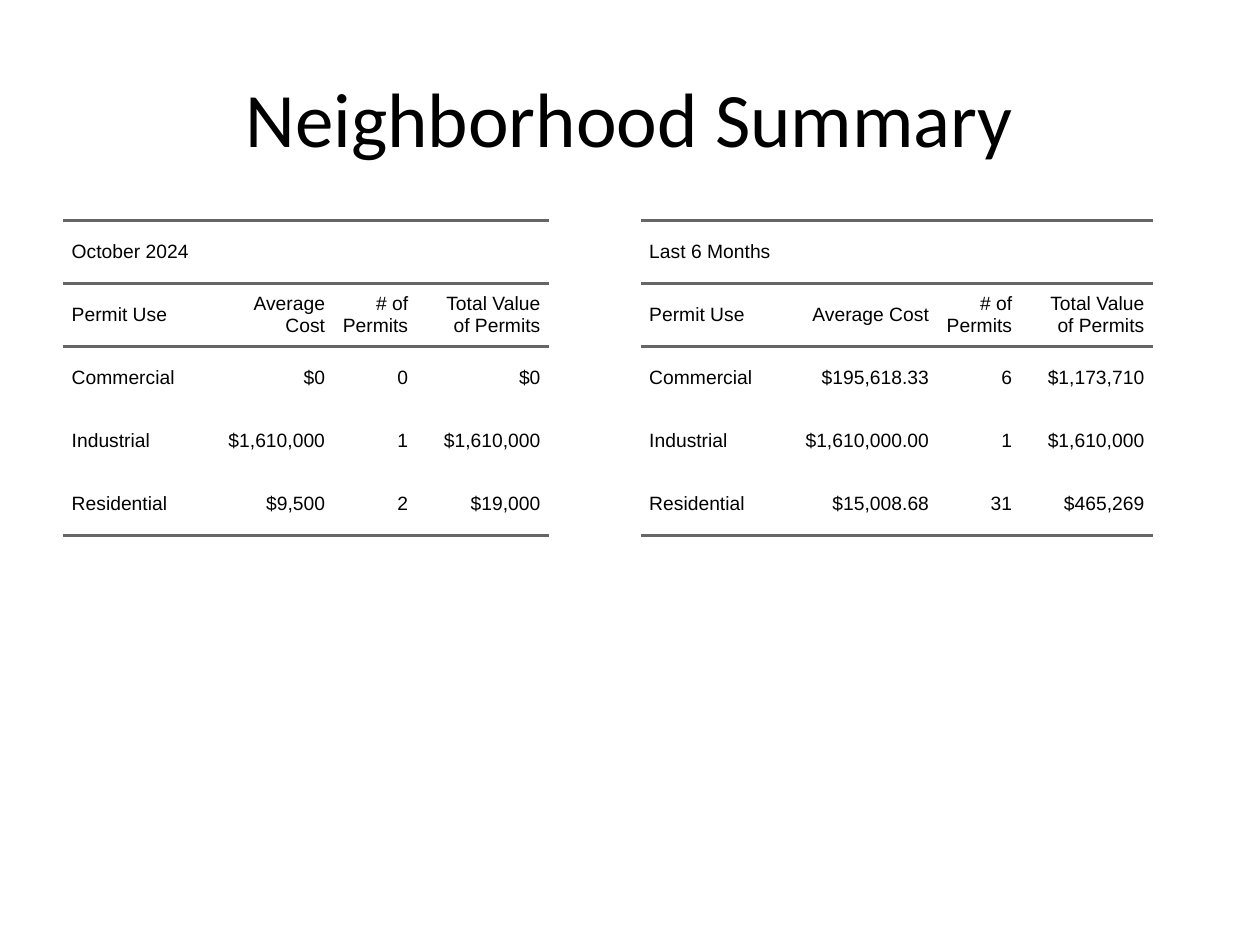
from lxml import etree
from pptx import Presentation
from pptx.dml.color import RGBColor
from pptx.enum import text as t
from pptx.oxml import ns
from pptx.util import Pt

# Content
TITLE = "Neighborhood Summary"
HEADS = ("Permit Use", "Average Cost", "# of Permits", "Total Value of Permits")
TABLES = [
    {"name": "October 2024", "left": 36, "cols": (79.2, 75.6, 47.5, 75.6),
     "rows": [("Commercial", "$0", "0", "$0"),
              ("Industrial", "$1,610,000", "1", "$1,610,000"),
              ("Residential", "$9,500", "2", "$19,000")]},
    {"name": "Last 6 Months", "left": 366, "cols": (79.2, 90.7, 47.5, 75.6),
     "rows": [("Commercial", "$195,618.33", "6", "$1,173,710"),
              ("Industrial", "$1,610,000.00", "1", "$1,610,000"),
              ("Residential", "$15,008.68", "31", "$465,269")]},
]
TOP, ROW, PAD = 126, 36, 5
INK, RULE = "000000", "666666"
PLAIN = "{2D5ABB26-0587-4C30-8999-92F81FD0307C}"  # no style, no grid


def color(code):
    return RGBColor.from_string(code)


def write(frame, words, font="Arial", size=11, align=t.PP_ALIGN.LEFT, gap=0, indent=0):
    frame.word_wrap = True
    para = frame.paragraphs[0]
    para.alignment = align
    para.space_before = para.space_after = Pt(gap)
    props = para._p.get_or_add_pPr()
    props.set("marL", str(Pt(indent)))
    props.set("indent", "0")
    run = para.add_run()
    run.text = words
    run.font.name, run.font.size = font, Pt(size)
    run.font.color.rgb = color(INK)


def edge(cell, side):
    line = etree.SubElement(cell._tc.get_or_add_tcPr(), ns.qn("a:ln" + side),
                            w=str(Pt(1.5)), cap="flat", cmpd="sng")
    fill = etree.SubElement(line, ns.qn("a:solidFill"))
    etree.SubElement(fill, ns.qn("a:srgbClr"), val=RULE)
    etree.SubElement(line, ns.qn("a:prstDash"), val="solid")


def draw(slide, data):
    rows = [(data["name"], "", "", ""), HEADS, *data["rows"]]
    cols = data["cols"]
    frame = slide.shapes.add_table(len(rows), len(cols), Pt(data["left"]), Pt(TOP),
                                   Pt(sum(cols)), Pt(ROW * len(rows)))
    table = frame.table
    table._tbl.tblPr.find(ns.qn("a:tableStyleId")).text = PLAIN
    table.first_row = table.horz_banding = False
    for col, width in zip(table.columns, cols):
        col.width = Pt(width)
    table.cell(0, 0).merge(table.cell(0, len(cols) - 1))

    for r, row in enumerate(rows):
        table.rows[r].height = Pt(ROW)
        for c, words in enumerate(row):
            cell = table.cell(r, c)
            cell.margin_left = cell.margin_top = cell.margin_bottom = 0
            cell.margin_right = Pt(PAD)
            cell.vertical_anchor = t.MSO_ANCHOR.MIDDLE
            # Rules frame the two heading rows and close the table
            if r < 2:
                edge(cell, "T")
            if r < 2 or r == len(rows) - 1:
                edge(cell, "B")
            cell.fill.background()
            if words:
                align = t.PP_ALIGN.RIGHT if c else t.PP_ALIGN.LEFT
                write(cell.text_frame, words, align=align, gap=5, indent=PAD)


def main():
    deck = Presentation()
    deck.slide_width, deck.slide_height = Pt(720), Pt(540)
    slide = deck.slides.add_slide(deck.slide_layouts[6])

    # Tables
    for data in TABLES:
        draw(slide, data)

    # Title
    frame = slide.shapes.add_textbox(Pt(36), Pt(21.6), Pt(648), Pt(90)).text_frame
    frame.vertical_anchor = t.MSO_ANCHOR.MIDDLE
    write(frame, TITLE, font="Calibri", size=44, align=t.PP_ALIGN.CENTER)

    deck.save("out.pptx")


if __name__ == "__main__":
    main()
